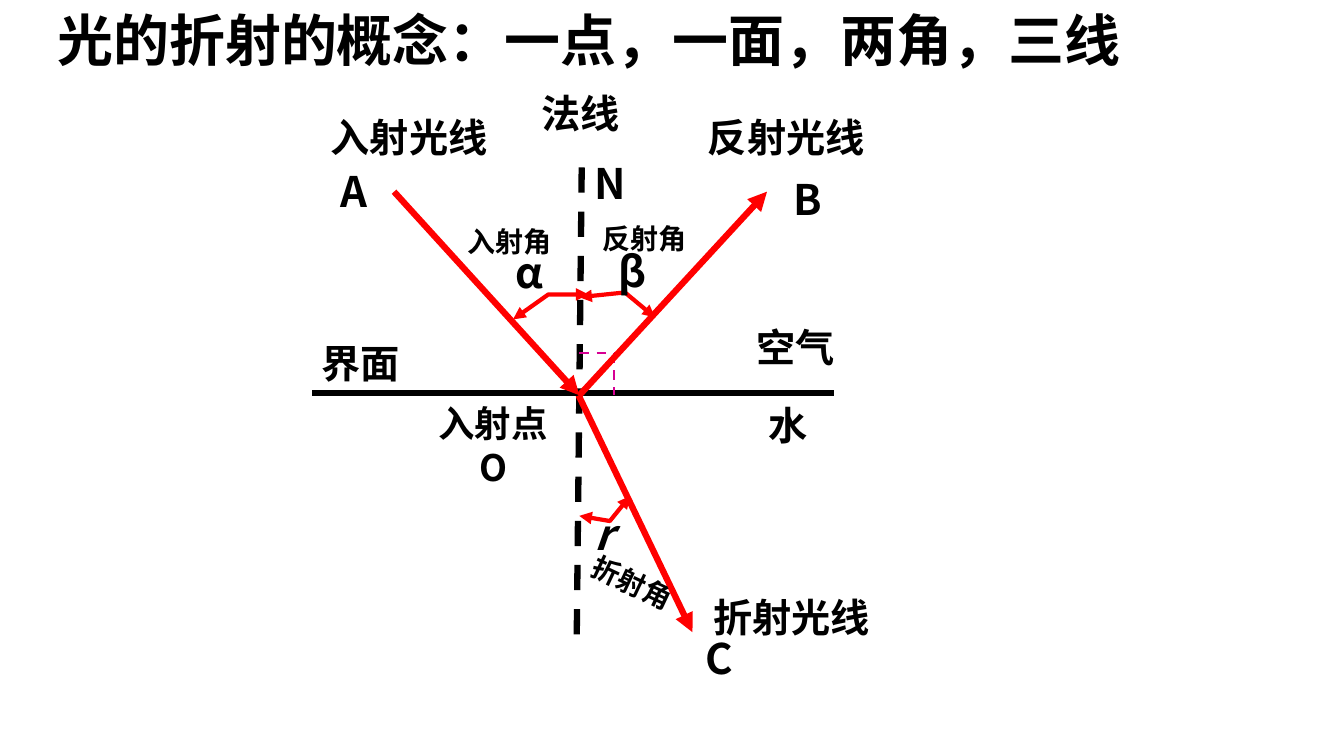
from dataclasses import dataclass

from lxml import etree
from pptx import Presentation
from pptx.dml.color import RGBColor
from pptx.enum.dml import MSO_LINE
from pptx.enum.shapes import MSO_CONNECTOR
from pptx.enum.text import MSO_ANCHOR, MSO_AUTO_SIZE, PP_ALIGN
from pptx.oxml.ns import qn
from pptx.util import Cm, Pt

STRAIGHT = MSO_CONNECTOR.STRAIGHT
DASH = MSO_LINE.DASH
TOP = MSO_ANCHOR.TOP
GROW = MSO_AUTO_SIZE.SHAPE_TO_FIT_TEXT
LEFT, CENTER = PP_ALIGN.LEFT, PP_ALIGN.CENTER

Point = tuple[float, float]


@dataclass(frozen=True)
class Theme:
    font: str = "Noto Sans CJK SC"
    ink: RGBColor = RGBColor(0x00, 0x00, 0x00)
    ray: RGBColor = RGBColor(0xFF, 0x00, 0x00)
    square: RGBColor = RGBColor(0xD6, 0x00, 0x93)
    title: float = 40
    letter: float = 30
    name: float = 28
    point: float = 26
    angle: float = 20
    thick: float = 4.5
    medium: float = 3
    thin: float = 1.75


THEME = Theme()


@dataclass(frozen=True)
class Line:
    start: Point
    end: Point
    color: RGBColor = THEME.ink
    width: float = THEME.thick
    dashed: bool = False
    arrow: bool = False


@dataclass(frozen=True)
class Label:
    text: str
    left: float
    top: float
    width: float
    size: float = THEME.name
    align: PP_ALIGN = CENTER
    italic: bool = False
    rotation: float = 0


ORIGIN = (14.6, 9.96)
SQUARE_CORNER = (15.47, 8.89)

LINES = [
    Line((7.87, 9.91), (21.01, 9.91)),
    Line((14.66, 4.22), (14.53, 16.43), dashed=True),
    Line((ORIGIN[0], SQUARE_CORNER[1]), SQUARE_CORNER, THEME.square, THEME.thin, dashed=True),
    Line(SQUARE_CORNER, (SQUARE_CORNER[0], ORIGIN[1]), THEME.square, THEME.thin, dashed=True),
    Line((9.93, 4.83), ORIGIN, THEME.ray, arrow=True),
    Line(ORIGIN, (19.33, 4.83), THEME.ray, arrow=True),
    Line((14.58, 9.96), (17.45, 15.93), THEME.ray, arrow=True),
]

ANGLE_MARKS = [
    [(12.93, 8.05), (13.82, 7.42), (14.83, 7.42)],
    [(14.6, 7.49), (15.75, 7.37), (16.51, 8.0)],
    [(14.6, 13.0), (15.37, 13.13), (15.88, 12.5)],
]

LABELS = [
    Label("界面", 7.24, 8.43, 3.71),
    Label("法线", 12.93, 2.13, 3.4),
    Label("入射光线", 7.67, 2.72, 5.28),
    Label("反射光线", 17.15, 2.72, 5.33),
    Label("折射光线", 16.97, 14.83, 5.97),
    Label("空气", 18.42, 8.03, 3.25),
    Label("水", 19.1, 9.98, 1.5),
    Label("入射点O", 10.59, 9.98, 3.68, THEME.point),
    Label("入射角", 10.95, 5.54, 3.78, THEME.angle),
    Label("反射角 ", 14.73, 5.46, 3.2, THEME.angle),
    Label("折射角", 13.74, 14.12, 4.39, THEME.angle, rotation=25.3),
    Label("A", 8.33, 4.04, 1.0, THEME.letter, LEFT),
    Label("B", 19.74, 4.24, 2.0, THEME.letter, LEFT),
    Label("N", 14.73, 3.84, 1.0, THEME.letter, LEFT),
    Label("α", 12.73, 6.1, 2.0, THEME.letter, LEFT),
    Label("β", 15.34, 6.05, 1.6, THEME.letter, LEFT),
    Label("r", 14.73, 12.7, 1.4, THEME.letter, LEFT, italic=True),
    Label("C", 17.53, 15.82, 2.0, THEME.letter, LEFT),
]


def write_text(box, text: str, *, size: float, align=LEFT, italic=False, wrap=True) -> None:
    frame = box.text_frame
    frame.word_wrap = wrap
    frame.auto_size = GROW
    frame.vertical_anchor = TOP
    para = frame.paragraphs[0]
    para.alignment = align
    span = para.add_run()
    span.text = text
    font = span.font
    font.name, font.size = THEME.font, Pt(size)
    font.bold, font.italic = True, italic
    font.color.rgb = THEME.ink
    east_asian = etree.SubElement(font._element, qn("a:ea"))
    east_asian.set("typeface", THEME.font)


def add_arrowheads(line, *ends: str) -> None:
    properties = line._get_or_add_ln()
    for end in ends:
        etree.SubElement(properties, qn(f"a:{end}")).set("type", "triangle")


def draw_line(page, spec: Line) -> None:
    ends = [Cm(value) for value in (*spec.start, *spec.end)]
    connector = page.shapes.add_connector(STRAIGHT, *ends)
    line = connector.line
    line.color.rgb = spec.color
    line.width = Pt(spec.width)
    if spec.dashed:
        line.dash_style = DASH
    if spec.arrow:
        add_arrowheads(line, "tailEnd")
    etree.SubElement(connector._element.spPr, qn("a:effectLst"))


def draw_angle_mark(page, points: list[Point]) -> None:
    first, *others = [(Cm(x), Cm(y)) for x, y in points]
    builder = page.shapes.build_freeform(*first)
    builder.add_line_segments(others, close=False)
    mark = builder.convert_to_shape()
    mark.shadow.inherit = False
    mark.fill.background()
    mark.line.color.rgb = THEME.ray
    mark.line.width = Pt(THEME.medium)
    add_arrowheads(mark.line, "headEnd", "tailEnd")


def draw_label(page, label: Label) -> None:
    height = Pt(label.size * 1.2) + Cm(0.25)
    box = page.shapes.add_textbox(Cm(label.left), Cm(label.top), Cm(label.width), height)
    box.rotation = label.rotation
    write_text(box, label.text, size=label.size, align=label.align, italic=label.italic)


def draw_title(page) -> None:
    title = page.shapes.title
    title.left, title.top = Cm(1.19), Cm(0)
    title.width, title.height = Cm(27.58), Cm(1.96)
    write_text(title, "光的折射的概念：一点，一面，两角，三线", size=THEME.title, wrap=False)


def main() -> None:
    deck = Presentation()
    deck.slide_width, deck.slide_height = Cm(33.87), Cm(19.05)
    page = deck.slides.add_slide(deck.slide_layouts[5])
    draw_title(page)
    for line in LINES:
        draw_line(page, line)
    for points in ANGLE_MARKS:
        draw_angle_mark(page, points)
    for label in LABELS:
        draw_label(page, label)
    deck.save("out.pptx")


if __name__ == "__main__":
    main()
